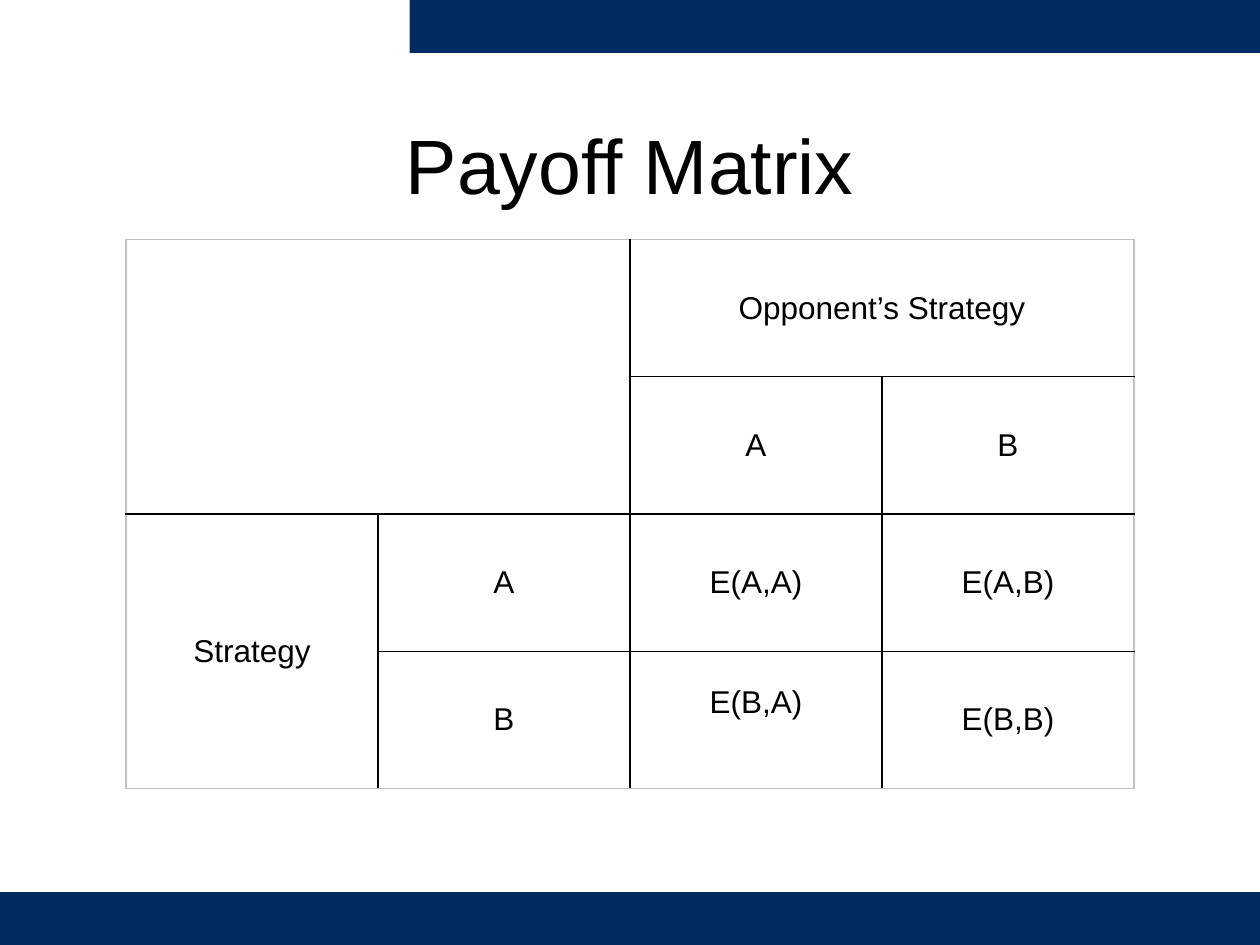
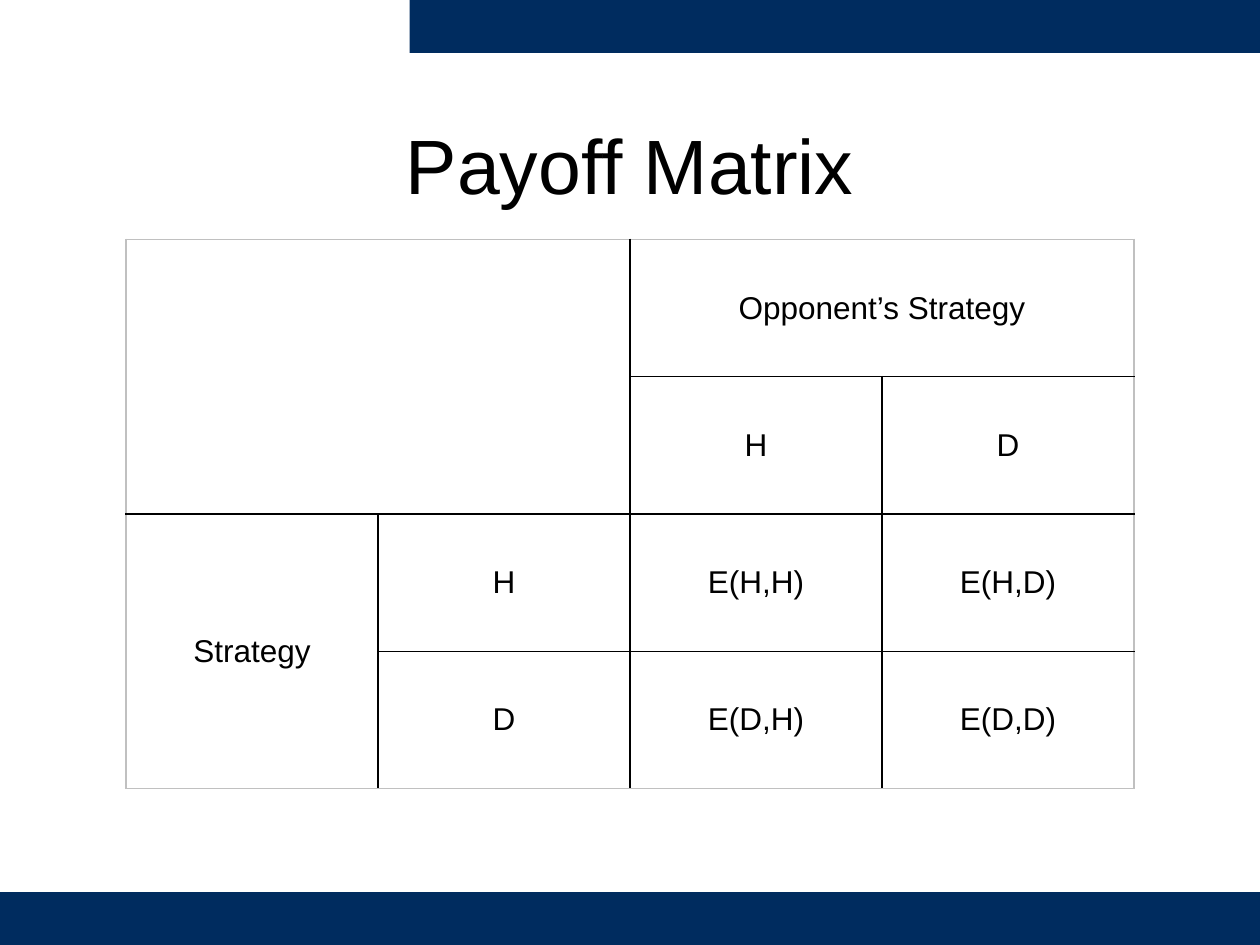
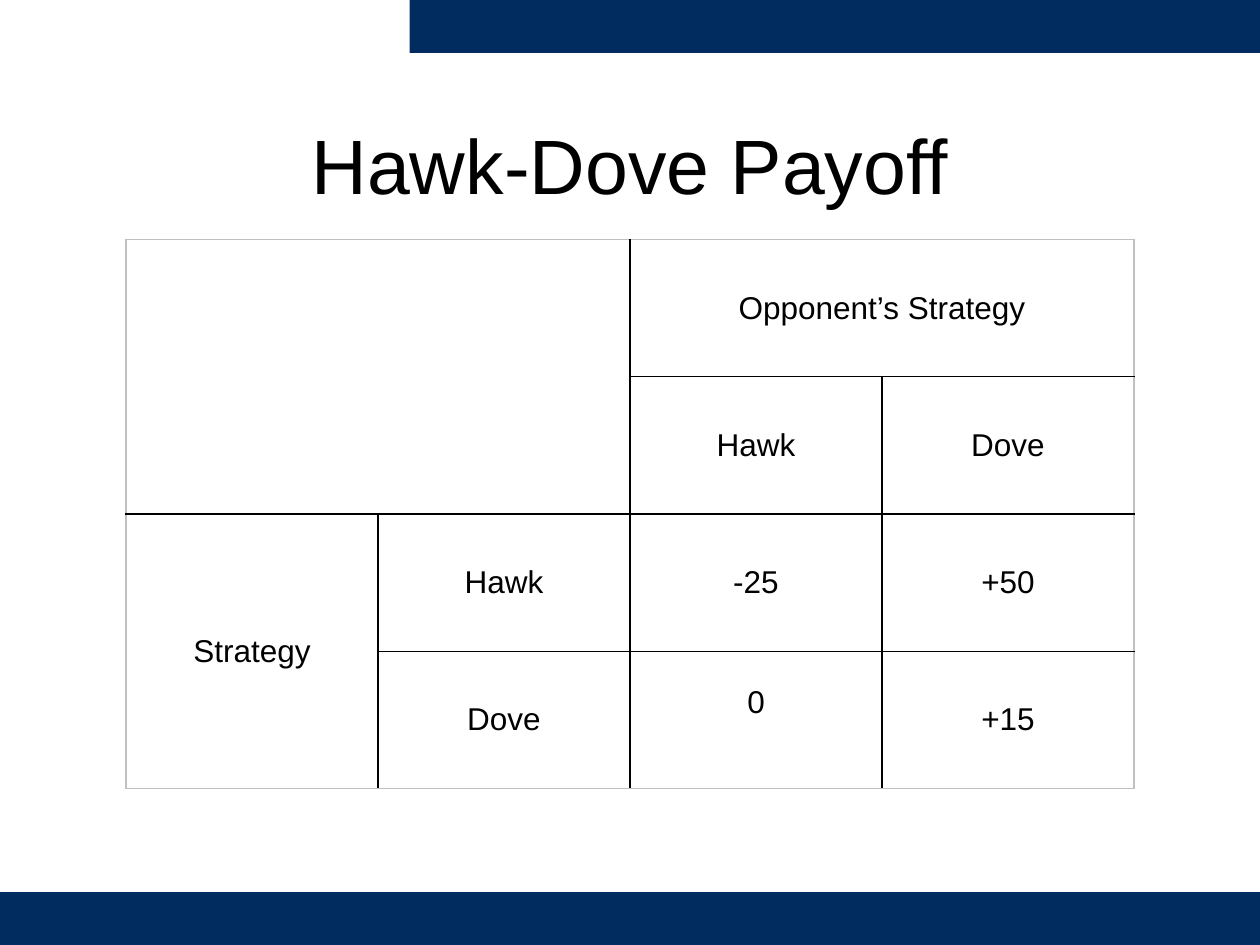
from lxml import etree
from pptx import Presentation
from pptx.dml.color import RGBColor
from pptx.enum.shapes import MSO_SHAPE
from pptx.enum.text import MSO_ANCHOR, PP_ALIGN
from pptx.oxml.ns import qn
from pptx.util import Inches, Pt

RECTANGLE = MSO_SHAPE.RECTANGLE
MIDDLE = MSO_ANCHOR.MIDDLE
CENTER = PP_ALIGN.CENTER
NAVY, BLACK, GRAY = "002C5F", "000000", "C0C0C0"
FONT = "Arial"
PLAIN_TABLE = "{2D5ABB26-0587-4C30-8999-92F81FD0307C}"
GRID = 4
COLUMN_WIDTH, ROW_HEIGHT = 2, 1.09
BAND_HEIGHT = 0.42
RAISED_MARGIN = 0.32


def color(value):
    return RGBColor.from_string(value)


class Deck:
    def __init__(self):
        self.presentation = Presentation()
        self.presentation.slide_width = Inches(10)
        self.presentation.slide_height = Inches(7.5)
        self.slide = None

    def start_slide(self, heading):
        self.slide = self.presentation.slides.add_slide(self.presentation.slide_layouts[6])
        self.band(3.25, 0, 6.75)
        self.band(0, 7.08, 10)
        self.title(heading)

    def band(self, left, top, width):
        band = self.slide.shapes.add_shape(
            RECTANGLE, Inches(left), Inches(top), Inches(width), Inches(BAND_HEIGHT))
        band.shadow.inherit = False
        band.fill.solid()
        band.fill.fore_color.rgb = color(NAVY)
        band.line.fill.background()

    def centered_text(self, frame, text, size):
        paragraph = frame.paragraphs[0]
        paragraph.alignment = CENTER
        run = paragraph.add_run()
        run.text = text
        run.font.name = FONT
        run.font.size = Pt(size)
        run.font.color.rgb = color(BLACK)

    def title(self, heading):
        title = self.slide.shapes.add_textbox(Inches(0.75), Inches(0.67), Inches(8.5), Inches(1.25))
        title.text_frame.word_wrap = True
        title.text_frame.vertical_anchor = MIDDLE
        self.centered_text(title.text_frame, heading, 44)

    def border(self, cell, side, value):
        line = etree.SubElement(cell._tc.get_or_add_tcPr(), qn(f"a:ln{side}"), w=str(Pt(1)))
        fill = etree.SubElement(line, qn("a:solidFill"))
        etree.SubElement(fill, qn("a:srgbClr"), val=value)

    def block(self, table, row, column, text="", rows=1, columns=1):
        last_row, last_column = row + rows - 1, column + columns - 1
        origin = table.cell(row, column)
        if rows * columns > 1:
            origin.merge(table.cell(last_row, last_column))
        for r in range(row, last_row + 1):
            for c in range(column, last_column + 1):
                cell = table.cell(r, c)
                is_origin = (r, c) == (row, column)
                edges = (
                    ("L", c == column, column == 0),
                    ("R", c == last_column, last_column == GRID - 1),
                    ("T", r == row, row == 0),
                    ("B", r == last_row, last_row == GRID - 1),
                )
                for side, on_edge, is_outer in edges:
                    if is_origin or on_edge:
                        self.border(cell, side, GRAY if is_outer else BLACK)
                cell.fill.background()
        origin.vertical_anchor = MIDDLE
        if text:
            self.centered_text(origin.text_frame, text, 18)

    def payoff_matrix(self, strategies, payoffs, raise_lower_left):
        frame = self.slide.shapes.add_table(
            GRID, GRID, Inches(1), Inches(1.9),
            Inches(GRID * COLUMN_WIDTH), Inches(GRID * ROW_HEIGHT))
        table = frame.table
        table._tbl.tblPr.find(qn("a:tableStyleId")).text = PLAIN_TABLE
        table.first_row = False
        table.horz_banding = False
        for column in table.columns:
            column.width = Inches(COLUMN_WIDTH)
        for row in table.rows:
            row.height = Inches(ROW_HEIGHT)
        self.block(table, 0, 0, rows=2, columns=2)
        self.block(table, 0, 2, "Opponent’s Strategy", columns=2)
        self.block(table, 2, 0, "Strategy", rows=2)
        for i, strategy in enumerate(strategies, start=2):
            self.block(table, 1, i, strategy)
            self.block(table, i, 1, strategy)
            for j, payoff in enumerate(payoffs[i - 2], start=2):
                self.block(table, i, j, payoff)
        if raise_lower_left:
            table.cell(3, 2).margin_bottom = Inches(RAISED_MARGIN)


def expected_payoffs(strategies):
    return [[f"E({own},{other})" for other in strategies] for own in strategies]


def main():
    deck = Deck()
    matrices = (
        ("Payoff Matrix", "AB", expected_payoffs("AB"), True),
        ("Payoff Matrix", "HD", expected_payoffs("HD"), False),
        ("Hawk-Dove Payoff", ("Hawk", "Dove"), (("-25", "+50"), ("0", "+15")), True),
    )
    for heading, strategies, payoffs, raise_lower_left in matrices:
        deck.start_slide(heading)
        deck.payoff_matrix(strategies, payoffs, raise_lower_left)
    deck.presentation.save("out.pptx")


if __name__ == "__main__":
    main()
